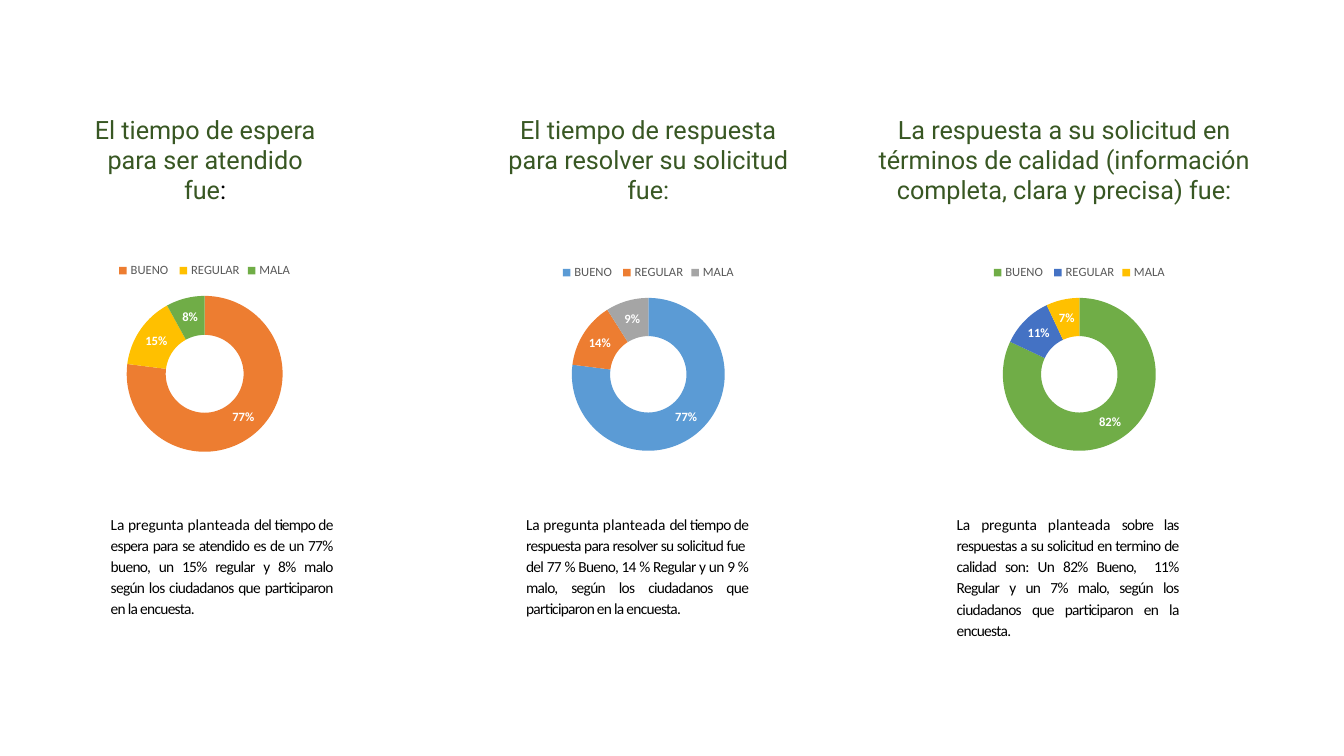
import pptx
import pptx.chart.data
import pptx.dml.color
import pptx.enum.chart
import pptx.enum.text
import pptx.util

Inches = pptx.util.Inches
Pt = pptx.util.Pt
ALIGN = pptx.enum.text.PP_ALIGN


def color(hex_text):
    return pptx.dml.color.RGBColor.from_string(hex_text)


def add_text(s, box, runs, size, font, align, line=1.0, left=0, right=0):
    """Add a text box; each run is (text, colour, letter spacing in points)."""
    sp = s.shapes.add_textbox(*(Inches(v) for v in box))
    tf = sp.text_frame
    tf.word_wrap = True
    tf.auto_size = pptx.enum.text.MSO_AUTO_SIZE.SHAPE_TO_FIT_TEXT
    p = tf.paragraphs[0]
    p.alignment = align
    p.line_spacing = line
    pPr = p._p.get_or_add_pPr()
    pPr.set("marL", str(Inches(left)))
    pPr.set("marR", str(Inches(right)))
    for text, rgb, spacing in runs:
        r = p.add_run()
        r.text = text
        r.font.size = Pt(size)
        r.font.name = font
        r.font.color.rgb = color(rgb)
        r._r.get_or_add_rPr().set("spc", str(round(spacing * 100)))


GREEN, BLACK, GRAY, WHITE = "385723", "000000", "595959", "FFFFFF"
CATEGORIES = ["BUENO ", "REGULAR", "MALA"]
BODY_LEFT, BODY_STEP, BODY_WIDTH = 0.25, 4.2, 4.13

questions = [
    dict(
        heading=[("El tiempo de espera para ser atendido fue", GREEN, 0), (":", BLACK, 0)],
        heading_box=(0.73, 1.08, 2.61, 0.71),
        chart_box=(0.25, 2.5, 3.56, 2.12),
        values=(77, 15, 8),
        colors=("ED7D31", "FFC000", "70AD47"),
        body_box=(0.25, 5.03, 4.13, 1.17),
        body="del tiempo de espera para se atendido es de un 77% bueno, un 15% regular "
             "y 8% malo según los ciudadanos que participaron en la encuesta.",
    ),
    dict(
        heading=[("El tiempo de respuesta para resolver su solicitud fue:", GREEN, 0)],
        heading_box=(4.79, 1.08, 3.28, 0.71),
        chart_box=(4.62, 2.52, 3.62, 2.09),
        values=(77, 14, 9),
        colors=("5B9BD5", "ED7D31", "A5A5A5"),
        body_box=(4.37, 5.03, 4.13, 1.17),
        body="del tiempo de respuesta para resolver su solicitud fue  del 77 % Bueno, "
             "14 % Regular y un 9 % malo, según los ciudadanos que participaron en la encuesta.",
    ),
    dict(
        heading=[("La respuesta a su solicitud en términos de calidad "
                  "(información completa, clara y precisa) fue:", GREEN, 0)],
        heading_box=(8.38, 1.08, 4.35, 1.01),
        chart_box=(8.88, 2.52, 3.65, 2.09),
        values=(82, 11, 7),
        colors=("70AD47", "4472C4", "FFC000"),
        body_box=(8.64, 5.03, 4.13, 1.38),
        body="sobre las respuestas a su solicitud en termino de calidad son: Un 82% Bueno,  "
             "11% Regular y un 7% malo, según los ciudadanos que participaron en la encuesta.",
    ),
]

prs = pptx.Presentation()
prs.slide_width = Inches(13.33)
prs.slide_height = Inches(7.5)
s = prs.slides.add_slide(prs.slide_layouts[6])

for question in questions:
    add_text(s, question["heading_box"], question["heading"], 18, "Roboto", ALIGN.CENTER)

    data = pptx.chart.data.CategoryChartData()
    data.categories = CATEGORIES
    data.add_series("Series 1", question["values"])
    chart = s.shapes.add_chart(
        pptx.enum.chart.XL_CHART_TYPE.DOUGHNUT,
        *(Inches(v) for v in question["chart_box"]), data).chart
    chart.has_title = False
    chart.font.size = Pt(10)
    chart.font.name = "Calibri"
    chart.font.color.rgb = color(BLACK)

    chart.has_legend = True
    legend = chart.legend
    legend.position = pptx.enum.chart.XL_LEGEND_POSITION.TOP
    legend.include_in_layout = False
    legend.font.size = Pt(9)
    legend.font.name = "Calibri"
    legend.font.color.rgb = color(GRAY)

    plot = chart.plots[0]
    for i, rgb in enumerate(question["colors"]):
        fill = plot.series[0].points[i].format.fill
        fill.solid()
        fill.fore_color.rgb = color(rgb)

    plot.has_data_labels = True
    labels = plot.data_labels
    labels.show_percentage = True
    labels.show_value = False
    labels.number_format = "0%"
    labels.number_format_is_linked = False
    labels.font.size = Pt(9)
    labels.font.bold = True
    labels.font.name = "Calibri"
    labels.font.color.rgb = color(WHITE)

    body = [("La pregunta ", BLACK, -0.1), ("planteada ", BLACK, 0),
            (question["body"], BLACK, -0.5)]
    add_text(s, question["body_box"], body, 11, "Calibri", ALIGN.JUSTIFY,
             line=1.15, left=0.75, right=0.98)

prs.save("out.pptx")
